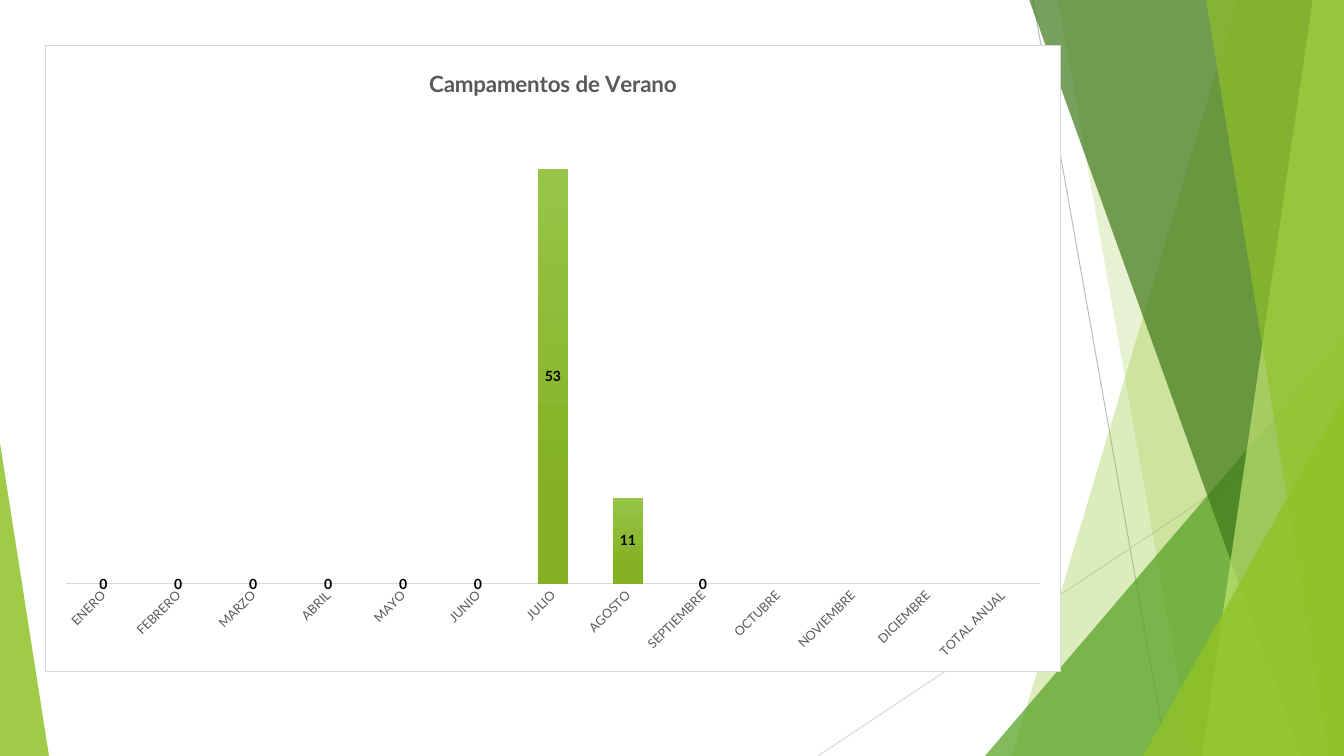
from lxml import etree
from pptx import Presentation
from pptx.chart.data import CategoryChartData
from pptx.dml.color import RGBColor
from pptx.enum.chart import XL_CHART_TYPE as ChartType
from pptx.enum.chart import XL_LABEL_POSITION as LabelPosition
from pptx.enum.chart import XL_TICK_MARK as TickMark
from pptx.enum.shapes import MSO_CONNECTOR as Connector
from pptx.enum.shapes import MSO_SHAPE as Shape
from pptx.oxml import parse_xml
from pptx.oxml.ns import nsdecls, qn
from pptx.util import Pt

PX = 914400 / 100.8
WIDTH, HEIGHT = 1344, 756
FONT = "Lato"
GREEN, GREY, PALE_GREY = "90C226", "595959", "D9D9D9"

MONTHS = ["ENERO", "FEBRERO", "MARZO", "ABRIL", "MAYO", "JUNIO", "JULIO", "AGOSTO",
          "SEPTIEMBRE", "OCTUBRE", "NOVIEMBRE", "DICIEMBRE", "TOTAL ANUAL"]
CAMPS = [0, 0, 0, 0, 0, 0, 53, 11, 0, None, None, None, None]


def emu(px):
    return round(px * PX)


def color(hex_code):
    return RGBColor.from_string(hex_code)


def paint(shape, hex_code, opacity):
    """Fill a shape without outline; opacity is a percentage."""
    shape.shadow.inherit = False
    shape.line.fill.background()
    shape.fill.solid()
    shape.fill.fore_color.rgb = color(hex_code)
    tint = shape.element.spPr.find(".//" + qn("a:srgbClr"))
    etree.SubElement(tint, qn("a:alpha"), val=str(opacity * 1000))


def add_line(page, start, end, hex_code):
    line = page.shapes.add_connector(Connector.STRAIGHT, *map(emu, start + end))
    line.line.color.rgb = color(hex_code)
    line.line.width = Pt(0.75)
    etree.SubElement(line.element.spPr, qn("a:effectLst"))


def add_band(page, top_left, bottom_left, hex_code, opacity, top_right=WIDTH):
    """Draw a full-height band that reaches the right edge of the slide."""
    builder = page.shapes.build_freeform(top_left, -1, scale=PX)
    builder.add_line_segments(
        [(top_right, -1), (WIDTH, HEIGHT), (bottom_left, HEIGHT)], close=True)
    paint(builder.convert_to_shape(), hex_code, opacity)


def add_corner(page, left, top, width, apex, hex_code, opacity):
    """Draw a triangle standing on the bottom edge; apex is 0 (left) to 1 (right)."""
    box = map(emu, (left, top, width, HEIGHT - top))
    triangle = page.shapes.add_shape(Shape.ISOSCELES_TRIANGLE, *box)
    triangle.adjustments[0] = apex
    paint(triangle, hex_code, opacity)


def set_font(font, size, hex_code, bold=False):
    font.name = FONT
    font.size = Pt(size)
    font.bold = bold
    font.color.rgb = color(hex_code)


def add_decoration(page):
    add_line(page, (1033, 0), (1167, HEIGHT), "BFBFBF")
    add_line(page, (WIDTH, 406), (818, HEIGHT), PALE_GREY)
    add_band(page, 1238, 1012, GREEN, 30)
    add_band(page, 1058, 1192, GREEN, 20)
    add_corner(page, 985, 336, 359, 1, "54A021", 72)
    add_band(page, 1029, 1301, "3F7819", 70)
    add_band(page, 1313, 1202, "C0E474", 70, top_right=WIDTH)
    add_band(page, 1206, 1329, GREEN, 65)
    add_corner(page, 1143, 396, 201, 1, GREEN, 80)
    add_corner(page, 0, 443, 49, 0, GREEN, 85)


def frame_chart(chart):
    """Give the chart area a white fill and a thin border."""
    chart._chartSpace.chart.addnext(parse_xml(
        f'<c:spPr {nsdecls("c", "a")}>'
        '<a:solidFill><a:srgbClr val="FFFFFF"/></a:solidFill>'
        f'<a:ln w="9525"><a:solidFill><a:srgbClr val="{PALE_GREY}"/></a:solidFill></a:ln>'
        '</c:spPr>'))


def place_plot(chart, **fractions):
    """Fix the inner plot area as fractions of the chart area."""
    plot_area = chart._chartSpace.chart.plotArea
    for old in plot_area.findall(qn("c:layout")):
        plot_area.remove(old)
    sizes = "".join(f'<c:{key} val="{value}"/>' for key, value in fractions.items())
    plot_area.insert(0, parse_xml(
        f'<c:layout {nsdecls("c")}><c:manualLayout><c:layoutTarget val="inner"/>'
        '<c:xMode val="edge"/><c:yMode val="edge"/>'
        f'{sizes}</c:manualLayout></c:layout>'))


def style_axes(chart):
    months = chart.category_axis
    months.major_tick_mark = months.minor_tick_mark = TickMark.NONE
    months.has_major_gridlines = False
    months.format.line.color.rgb = color(PALE_GREY)
    months.format.line.width = Pt(1)
    set_font(months.tick_labels.font, 9, GREY)
    months._element.find(qn("c:txPr")).find(qn("a:bodyPr")).set("rot", "-2700000")
    values = chart.value_axis
    values.minimum_scale, values.maximum_scale = 0, 60
    values.has_major_gridlines = False
    values.visible = False


def style_columns(plot):
    plot.gap_width, plot.overlap = 150, 100
    plot.vary_by_categories = False
    fill = plot.series[0].format.fill
    fill.gradient()
    fill.gradient_angle = 270
    stops = [(0, "97C547"), (0.78, "84B223")]
    for stop, (position, hex_code) in zip(fill.gradient_stops, stops):
        stop.position = position
        stop.color.rgb = color(hex_code)
    labels = plot.series[0].data_labels
    labels.show_value = True
    labels.position = LabelPosition.CENTER
    set_font(labels.font, 10, "000000", bold=True)


def add_camp_chart(page):
    data = CategoryChartData()
    data.categories = MONTHS
    data.add_series("Series 1", CAMPS)
    box = map(emu, (45, 45, 1016, 627))
    chart = page.shapes.add_chart(ChartType.COLUMN_STACKED, *box, data).chart
    set_font(chart.font, 10, "000000")
    chart.has_legend = False
    chart.has_title = True
    title = chart.chart_title.text_frame
    title.text = "Campamentos de Verano"
    set_font(title.paragraphs[0].font, 16, GREY, bold=True)
    chart.chart_title.include_in_layout = False
    frame_chart(chart)
    place_plot(chart, x=0.02, y=0.11, w=0.96, h=0.75)
    style_axes(chart)
    style_columns(chart.plots[0])


def main():
    deck = Presentation()
    deck.slide_width, deck.slide_height = emu(WIDTH), emu(HEIGHT)
    page = deck.slides.add_slide(deck.slide_layouts[6])
    add_decoration(page)
    add_camp_chart(page)
    deck.save("out.pptx")


if __name__ == "__main__":
    main()
